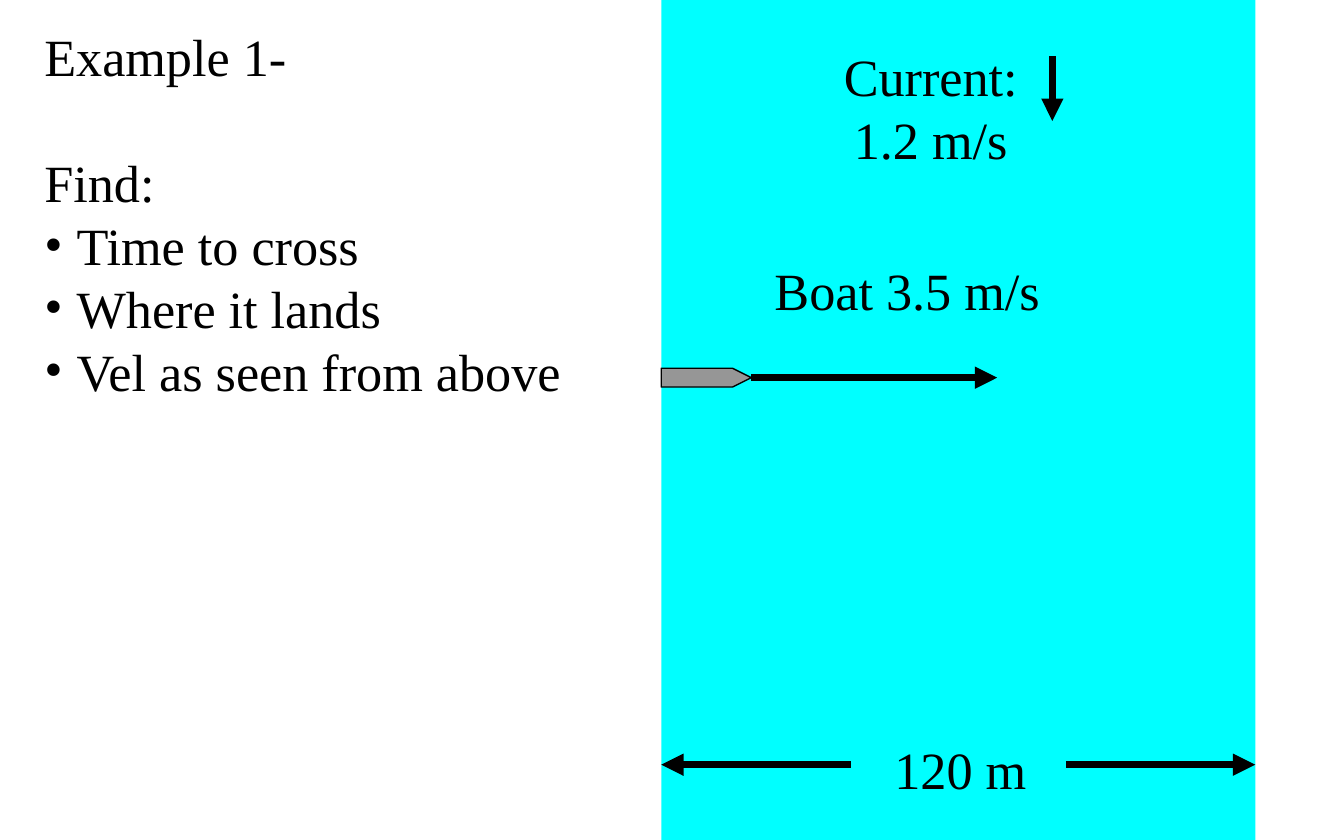
"""Build a slide on a boat that crosses a river with a current."""
from dataclasses import dataclass

from lxml.etree import SubElement
from pptx import Presentation
from pptx.dml.color import RGBColor
from pptx.enum.shapes import MSO_CONNECTOR, MSO_SHAPE
from pptx.enum.text import MSO_ANCHOR, MSO_AUTO_SIZE, PP_ALIGN
from pptx.oxml.ns import qn
from pptx.shapes.autoshape import Shape
from pptx.shapes.connector import Connector
from pptx.slide import Slide
from pptx.text.text import TextFrame
from pptx.util import Inches, Pt

WIDE, HIGH = Inches(10), Inches(6.25)
COLS, ROWS = 100, 62.5


@dataclass(frozen=True)
class Theme:
    ink: RGBColor = RGBColor(0, 0, 0)
    water: RGBColor = RGBColor(0, 255, 255)
    hull: RGBColor = RGBColor(150, 150, 150)
    font: str = "Times New Roman"
    size: Pt = Pt(28)
    edge: Pt = Pt(0.75)
    arrow: Pt = Pt(4)
    indent: Inches = Inches(0.24)


@dataclass(frozen=True)
class Box:
    col: float
    row: float
    cols: float
    rows: float

    def place(self) -> tuple[int, int, int, int]:
        return (across(self.col), down(self.row),
                across(self.cols), down(self.rows))


@dataclass(frozen=True)
class Label:
    text: str
    box: Box


@dataclass(frozen=True)
class Arrow:
    start: tuple[float, float]
    end: tuple[float, float]


THEME = Theme()
RIVER = Box(49.2, 0, 44.2, ROWS)
BANK = RIVER.col + RIVER.cols
BOAT = Box(RIVER.col, 27.4, 6.7, 1.4)
MID = BOAT.row + BOAT.rows / 2
SPAN_ROW, SPAN = 56.9, 14.1
TITLE = Label("Example 1-", Box(2.3, 1.3, 46.8, 5.7))
LIST = Label("Find:\nTime to cross\nWhere it lands\nVel as seen from above",
             Box(2.3, 10.7, 46.8, 19.9))
LABELS = (
    Label("Current:\n1.2 m/s", Box(61.7, 2.8, 15.1, 10.4)),
    Label("Boat 3.5 m/s", Box(56.5, 18.7, 22, 5.7)),
    Label("120 m", Box(65.5, 54.4, 11.9, 5.7)),
)
CURRENT = Arrow((78.3, 4.2), (78.3, 9))
COURSE = Arrow((BOAT.col + BOAT.cols, MID), (74.2, MID))
WIDTHS = (
    Arrow((RIVER.col + SPAN, SPAN_ROW), (RIVER.col, SPAN_ROW)),
    Arrow((BANK - SPAN, SPAN_ROW), (BANK, SPAN_ROW)),
)


def across(cols: float) -> int:
    return round(WIDE * cols / COLS)


def down(rows: float) -> int:
    return round(HIGH * rows / ROWS)


def write(frame: TextFrame, text: str, align: PP_ALIGN) -> None:
    frame.text = text
    frame.auto_size = MSO_AUTO_SIZE.NONE
    frame.vertical_anchor = MSO_ANCHOR.TOP
    for para in frame.paragraphs:
        para.alignment = align
        para.space_before = Pt(0)
        for run in para.runs:
            run.font.name = THEME.font
            run.font.size = THEME.size
            run.font.color.rgb = THEME.ink


def fill_holder(holder: Shape, label: Label) -> None:
    holder.left, holder.top, holder.width, holder.height = label.box.place()
    write(holder.text_frame, label.text, PP_ALIGN.LEFT)


def set_bullets(frame: TextFrame) -> None:
    for place, para in enumerate(frame.paragraphs):
        props = para._p.get_or_add_pPr()
        hang = THEME.indent if place else 0
        props.set("marL", str(hang))
        props.set("indent", str(-hang))
        if place:
            SubElement(props, qn("a:buFont")).set("typeface", THEME.font)
            SubElement(props, qn("a:buChar")).set("char", "•")
        else:
            SubElement(props, qn("a:buNone"))


def add_label(slide: Slide, label: Label) -> None:
    frame = slide.shapes.add_textbox(*label.box.place()).text_frame
    write(frame, label.text, PP_ALIGN.CENTER)
    frame.word_wrap = False


def add_block(slide: Slide, kind: MSO_SHAPE, box: Box, color: RGBColor) -> Shape:
    shape = slide.shapes.add_shape(kind, *box.place())
    shape.shadow.inherit = False
    shape.fill.solid()
    shape.fill.fore_color.rgb = color
    shape.line.fill.background()
    return shape


def add_arrow(slide: Slide, arrow: Arrow) -> Connector:
    (col, row), (to_col, to_row) = arrow.start, arrow.end
    line = slide.shapes.add_connector(
        MSO_CONNECTOR.STRAIGHT, across(col), down(row), across(to_col), down(to_row))
    line.line.color.rgb = THEME.ink
    line.line.width = THEME.arrow
    SubElement(line.line._get_or_add_ln(), qn("a:tailEnd")).set("type", "triangle")
    SubElement(line._element.spPr, qn("a:effectLst"))
    return line


def main() -> None:
    deck = Presentation()
    deck.slide_width, deck.slide_height = WIDE, HIGH
    slide = deck.slides.add_slide(deck.slide_layouts[1])

    title, body = slide.shapes.title, slide.placeholders[1]
    fill_holder(title, TITLE)
    fill_holder(body, LIST)
    set_bullets(body.text_frame)

    add_block(slide, MSO_SHAPE.RECTANGLE, RIVER, THEME.water)
    boat = add_block(slide, MSO_SHAPE.PENTAGON, BOAT, THEME.hull)
    boat.adjustments[0] = 1
    boat.line.color.rgb = THEME.ink
    boat.line.width = THEME.edge

    for label in LABELS:
        add_label(slide, label)
    for arrow in (CURRENT, *WIDTHS):
        add_arrow(slide, arrow)
    add_arrow(slide, COURSE).begin_connect(boat, 3)

    deck.save("out.pptx")


if __name__ == "__main__":
    main()
